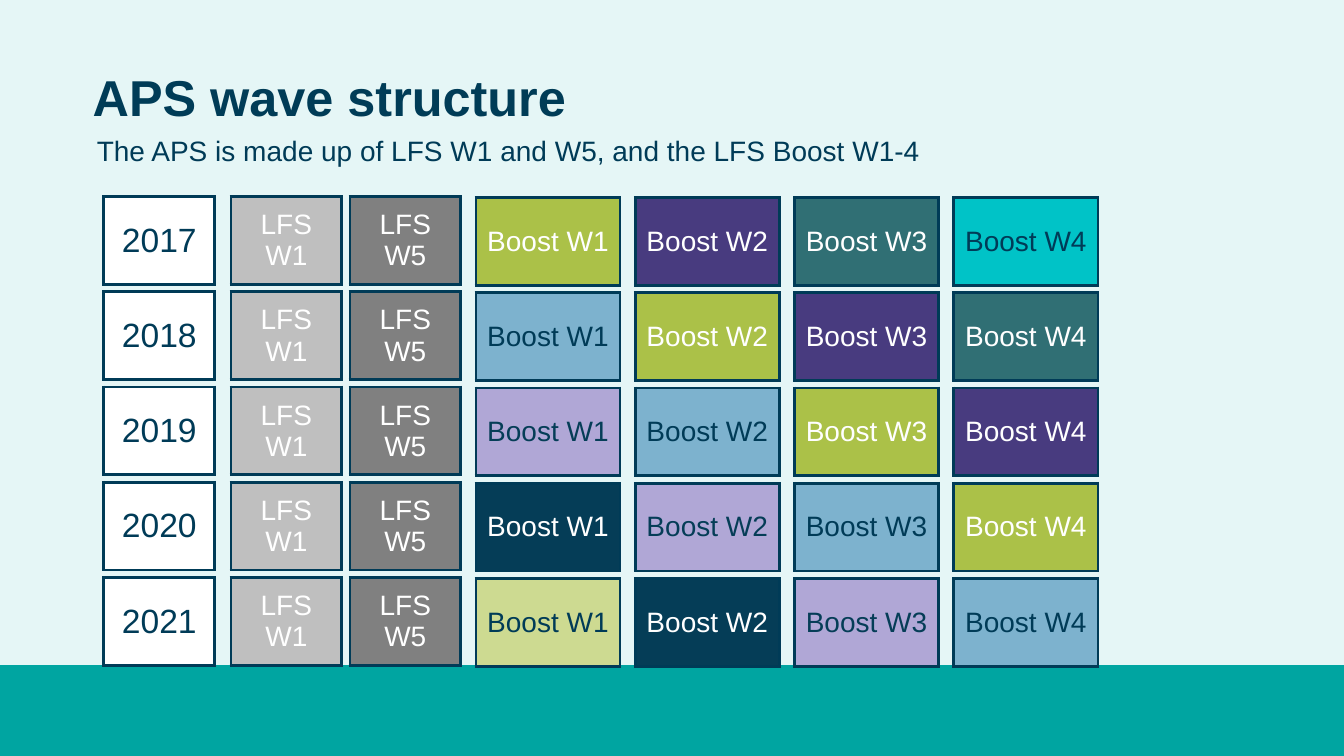
from lxml.etree import SubElement
from pptx import Presentation
from pptx.dml.color import RGBColor
from pptx.enum.shapes import MSO_SHAPE
from pptx.enum.text import MSO_ANCHOR as ANCHOR, PP_ALIGN as ALIGN
from pptx.oxml.ns import qn
from pptx.util import Inches, Pt

COLORS = {
    "backdrop": "E5F6F6", "band": "00A5A1", "title": "003C57",
    "ink": "003B57", "white": "FFFFFF", "silver": "BFBFBF", "grey": "808080",
    "cyan": "00C3C7", "teal": "306F74", "purple": "483B7F", "green": "ABC148",
    "blue": "7DB2CE", "lilac": "B0A7D6", "navy": "053D57", "lime": "CDDA91",
}
YEARS = range(2017, 2022)
COHORTS = [
    ("cyan", "ink"), ("teal", "white"), ("purple", "white"), ("green", "white"),
    ("blue", "ink"), ("lilac", "navy"), ("navy", "white"), ("lime", "ink"),
]
WAVES = 4
ROW_TOP, ROW_STEP, CARD_HEIGHT = 1.95, 0.945, 0.87
BOOST_LEFT, BOOST_STEP = 4.72, 1.58
NARROW, WIDE = 1.1, 1.43


def rgb(name):
    """Return the named colour."""
    return RGBColor.from_string(COLORS[name])


def add_run(p, text, size, color, bold=False):
    """Add one formatted run to a paragraph."""
    r = p.add_run()
    r.text = text
    r.font.name = "Arial"
    r.font.size = Pt(size)
    r.font.bold = bold
    r.font.color.rgb = rgb(color)


def add_text(s, box, text, size, color, insets, anchor, bold=False):
    """Add a one-line text box and return its paragraph."""
    tf = s.shapes.add_textbox(*map(Inches, box)).text_frame
    tf.word_wrap = True
    tf.vertical_anchor = anchor
    tf.margin_left, tf.margin_top, tf.margin_right, tf.margin_bottom = map(Inches, insets)
    p = tf.paragraphs[0]
    add_run(p, text, size, color, bold)
    return p


def add_band(s):
    """Add the coloured band along the foot of the slide."""
    sp = s.shapes.add_shape(MSO_SHAPE.RECTANGLE, 0, Inches(6.6), Inches(13.33), Inches(0.9))
    sp.shadow.inherit = False
    sp.fill.solid()
    sp.fill.fore_color.rgb = rgb("band")
    sp.line.fill.background()


def add_borders(cell):
    """Outline all four sides of a table cell."""
    tc_pr = cell._tc.get_or_add_tcPr()
    for i, side in enumerate(("a:lnL", "a:lnR", "a:lnT", "a:lnB")):
        ln = SubElement(tc_pr, qn(side), w=str(Pt(2.25)))
        fill = SubElement(ln, qn("a:solidFill"))
        SubElement(fill, qn("a:srgbClr"), val=COLORS["ink"])
        tc_pr.insert(i, ln)


def add_card(s, left, top, width, text, size, fill, color):
    """Add a single-cell table holding one label."""
    box = map(Inches, (left, top, width, CARD_HEIGHT))
    table = s.shapes.add_table(1, 1, *box).table
    table.first_row = table.horz_banding = False
    cell = table.cell(0, 0)
    cell.fill.solid()
    cell.fill.fore_color.rgb = rgb(fill)
    cell.vertical_anchor = ANCHOR.MIDDLE
    add_borders(cell)
    p = cell.text_frame.paragraphs[0]
    p.alignment = ALIGN.CENTER
    add_run(p, text, size, color)


def add_year_row(s, row, year):
    """Add the year, LFS and boost cards of one year."""
    top = ROW_TOP + row * ROW_STEP
    add_card(s, 1.03, top, NARROW, str(year), 24, "white", "ink")
    add_card(s, 2.29, top, NARROW, "LFS W1", 20, "silver", "white")
    add_card(s, 3.47, top, NARROW, "LFS W5", 20, "grey", "white")
    for wave in range(WAVES):
        fill, color = COHORTS[row - wave + WAVES - 1]
        left = BOOST_LEFT + wave * BOOST_STEP
        add_card(s, left, top + 0.01, WIDE, f"Boost W{wave + 1}", 20, fill, color)


def main():
    """Build and save the slide."""
    prs = Presentation()
    prs.slide_width, prs.slide_height = Inches(13.33), Inches(7.5)
    s = prs.slides.add_slide(prs.slide_layouts[6])
    s.background.fill.solid()
    s.background.fill.fore_color.rgb = rgb("backdrop")
    add_band(s)
    title = add_text(s, (0.92, 0.7, 11.5, 0.58), "APS wave structure", 36, "title",
                     (0, 0, 0, 0), ANCHOR.TOP, bold=True)
    title.line_spacing = 0.95
    add_text(s, (0.96, 1.27, 10.08, 0.44),
             "The APS is made up of LFS W1 and W5, and the LFS Boost W1-4",
             20, "ink", (0, 0.05, 0.1, 0.05), ANCHOR.BOTTOM)
    for row, year in enumerate(YEARS):
        add_year_row(s, row, year)
    prs.save("out.pptx")


if __name__ == "__main__":
    main()
